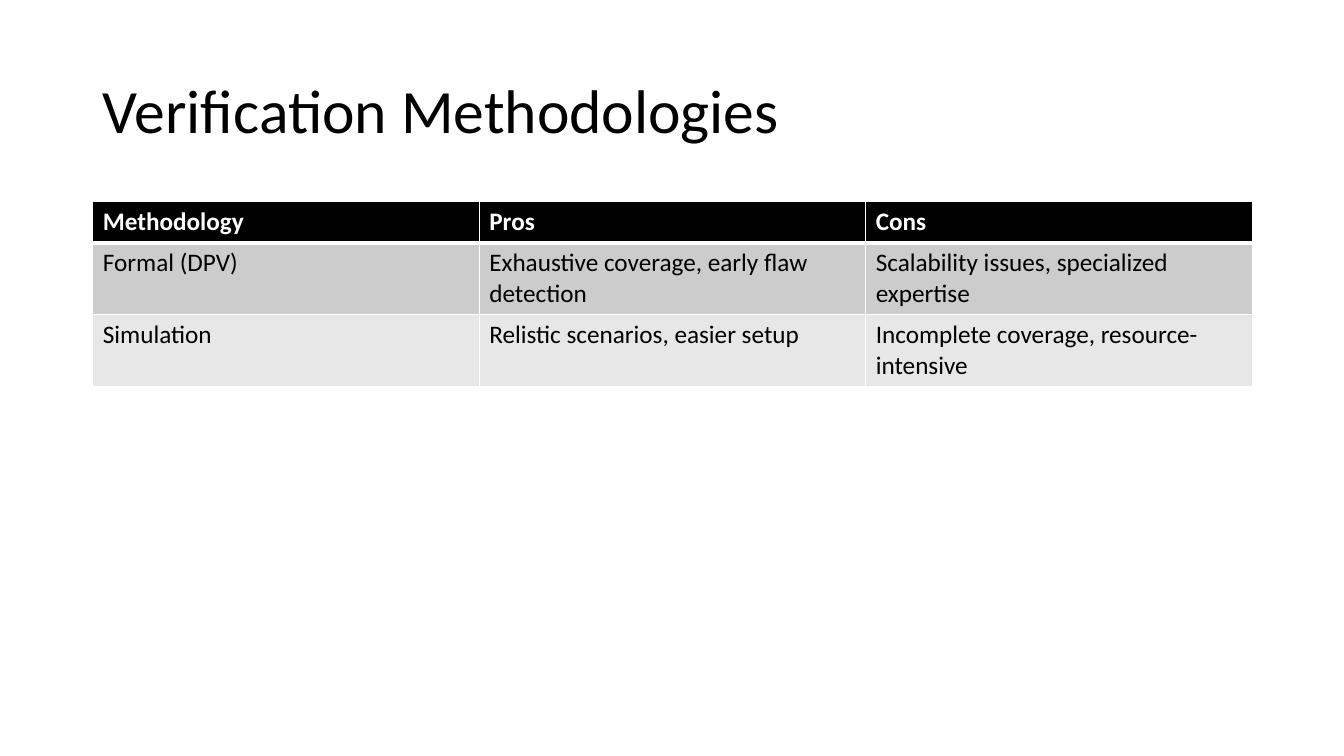
from lxml.etree import SubElement
from pptx import Presentation
from pptx.dml.color import RGBColor
from pptx.enum.text import MSO_ANCHOR, MSO_AUTO_SIZE, PP_ALIGN
from pptx.oxml.ns import qn
from pptx.util import Inches, Pt

TITLE = "Verification Methodologies"
ROWS = [
    ("Methodology", "Pros", "Cons"),
    ("Formal (DPV)", "Exhaustive coverage, early flaw detection",
     "Scalability issues, specialized expertise"),
    ("Simulation", "Relistic scenarios, easier setup",
     "Incomplete coverage, resource-intensive"),
]

BLACK = RGBColor(0x00, 0x00, 0x00)
WHITE = RGBColor(0xFF, 0xFF, 0xFF)
DARK_BAND = RGBColor(0xCC, 0xCC, 0xCC)
LIGHT_BAND = RGBColor(0xE7, 0xE7, 0xE7)
ROW_FILLS = [BLACK, DARK_BAND, LIGHT_BAND]

FONT = "Calibri"
LEFT, WIDTH = 0.92, 11.5
TABLE_TOP, ROW_HEIGHT = 2, 0.41


def format_font(font, size, color, bold=False):
    font.name = FONT
    font.size = Pt(size)
    font.bold = bold
    font.color.rgb = color


def add_title(slide):
    title = slide.shapes.title
    title.left, title.top = Inches(LEFT), Inches(0.4)
    title.width, title.height = Inches(WIDTH), Inches(1.45)
    frame = title.text_frame
    frame.text = TITLE
    frame.word_wrap = True
    frame.auto_size = MSO_AUTO_SIZE.NONE
    frame.vertical_anchor = MSO_ANCHOR.MIDDLE
    paragraph = frame.paragraphs[0]
    paragraph.alignment = PP_ALIGN.LEFT
    paragraph.line_spacing = 0.9
    format_font(paragraph.runs[0].font, 44, BLACK)


def set_borders(cell, widths):
    properties = cell._tc.get_or_add_tcPr()
    for side, width in widths.items():
        line = SubElement(properties, qn(f"a:ln{side}"), w=str(Pt(width)))
        fill = SubElement(line, qn("a:solidFill"))
        SubElement(fill, qn("a:srgbClr"), val=str(WHITE))


def add_methodology_table(slide):
    row_count, column_count = len(ROWS), len(ROWS[0])
    table = slide.shapes.add_table(
        row_count, column_count, Inches(LEFT), Inches(TABLE_TOP),
        Inches(WIDTH), Inches(ROW_HEIGHT * row_count)).table
    for row_index, (texts, row_fill) in enumerate(zip(ROWS, ROW_FILLS)):
        is_header = row_index == 0
        borders = {"L": 1, "R": 1, "T": 3 if row_index == 1 else 1,
                   "B": 3 if is_header else 1}
        for column_index, text in enumerate(texts):
            cell = table.cell(row_index, column_index)
            cell.text = text
            set_borders(cell, borders)
            cell.fill.solid()
            cell.fill.fore_color.rgb = row_fill
            run = cell.text_frame.paragraphs[0].runs[0]
            format_font(run.font, 18, WHITE if is_header else BLACK, is_header)


def main():
    presentation = Presentation()
    presentation.slide_width = Inches(13.33)
    presentation.slide_height = Inches(7.5)
    slide = presentation.slides.add_slide(presentation.slide_layouts[5])
    add_title(slide)
    add_methodology_table(slide)
    presentation.save("out.pptx")


if __name__ == "__main__":
    main()
